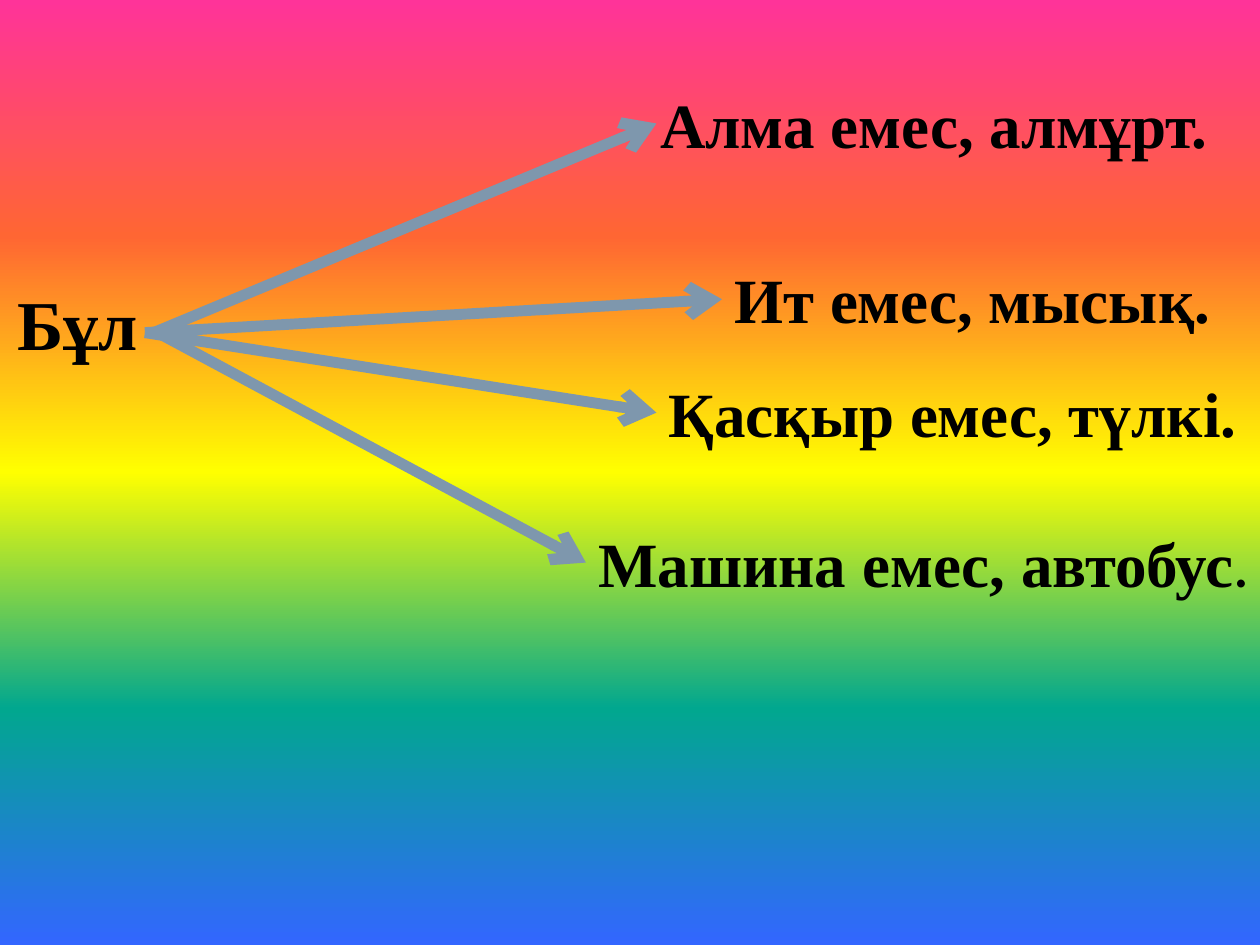
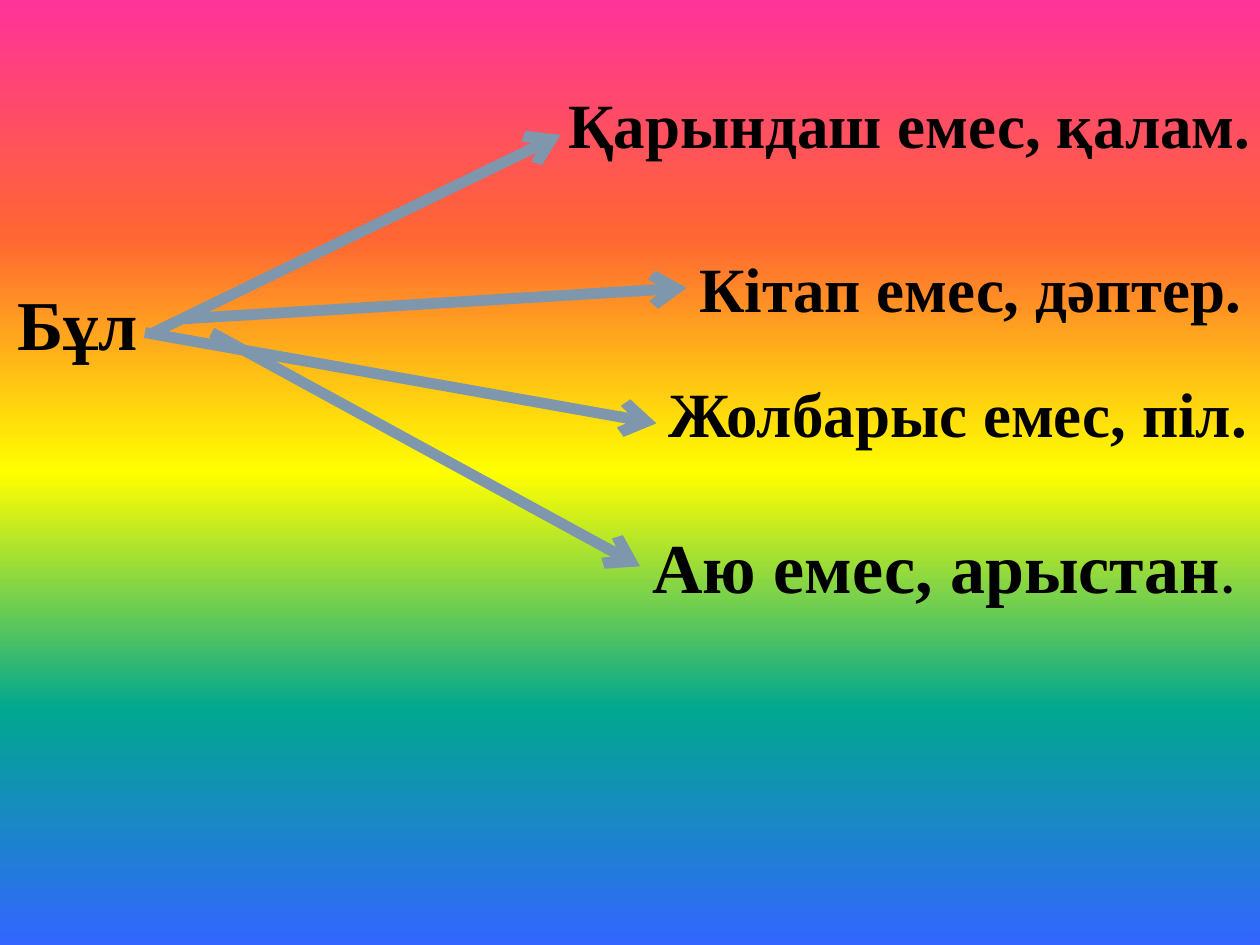
from lxml import etree
from pptx import Presentation
from pptx.dml.color import RGBColor
from pptx.enum.shapes import MSO_CONNECTOR
from pptx.enum.text import MSO_AUTO_SIZE
from pptx.oxml.ns import qn
from pptx.util import Inches, Pt

BLACK = RGBColor(0x00, 0x00, 0x00)
ARROW = RGBColor(0x7E, 0x97, 0xAD)
RAINBOW = [
    RGBColor(0xFF, 0x33, 0x99),
    RGBColor(0xFF, 0x66, 0x33),
    RGBColor(0xFF, 0xFF, 0x00),
    RGBColor(0x01, 0xA7, 0x8F),
    RGBColor(0x33, 0x66, 0xFF),
]
FONT = "Times New Roman"
DOT_FONT = "Lato"
BASE, LARGE = 36, 40
LEFT_SIDE = 1
START = (1.15, 2.64)

# Each answer: text, box, size, light final dot, arrow start, arrow end.
# An arrow end of None joins the arrow to the middle of the box's left side.
FIRST_ANSWERS = [
    ("Алма емес, алмұрт.", (5.14, 0.63, 4.59, 0.71), BASE, False, (1.22, 2.64), (5.21, 0.98)),
    ("Ит емес, мысық.", (5.73, 2.02, 4.02, 0.71), BASE, False, START, None),
    ("Қасқыр емес, түлкі.", (5.21, 2.92, 4.75, 0.71), BASE, False, START, None),
    ("Машина емес, автобус", (4.65, 4.11, 5.48, 0.71), BASE, True, (1.25, 2.64), None),
]
SECOND_ANSWERS = [
    ("Қарындаш емес, қалам.", (4.41, 0.63, 5.68, 0.71), BASE, False, (1.22, 2.64), (4.45, 1.07)),
    ("Кітап емес, дәптер.", (5.45, 1.93, 4.55, 0.71), BASE, False, (1.46, 2.53), None),
    ("Жолбарыс емес, піл.", (5.21, 2.92, 4.84, 0.71), BASE, False, START, (5.21, 3.36)),
    ("Аю емес, арыстан", (5.08, 4.11, 4.92, 0.77), LARGE, True, (1.68, 2.64), None),
]


def paint_rainbow(s):
    """Fill the slide background with evenly spaced colours, top to bottom."""
    fill = s.background.fill
    fill.gradient()
    fill.gradient_angle = 270
    stops = next(s.element.iter(qn("a:gsLst")))
    for stop in list(stops):
        stops.remove(stop)
    step = 100000 // (len(RAINBOW) - 1)
    for i, color in enumerate(RAINBOW):
        stop = etree.SubElement(stops, qn("a:gs"), pos=str(i * step))
        etree.SubElement(stop, qn("a:srgbClr"), val=str(color))


def add_label(s, text, box, size, light_dot=False):
    sp = s.shapes.add_textbox(*map(Inches, box))
    tf = sp.text_frame
    tf.word_wrap = False
    tf.auto_size = MSO_AUTO_SIZE.SHAPE_TO_FIT_TEXT
    p = tf.paragraphs[0]
    p.font.name = FONT
    p.font.size = Pt(size)
    p.font.bold = True
    p.font.color.rgb = BLACK
    p.add_run().text = text
    if light_dot:
        r = p.add_run()
        r.text = "."
        r.font.name = DOT_FONT
        r.font.size = Pt(BASE)
        r.font.bold = False
    return sp


def add_arrow(s, start, end, label):
    """Draw an arrow to the end point, or to the label's left side if end is None."""
    x, y = map(Inches, end or start)
    line = s.shapes.add_connector(MSO_CONNECTOR.STRAIGHT, *map(Inches, start), x, y)
    if end is None:
        line.end_connect(label, LEFT_SIDE)
    line.line.color.rgb = ARROW
    line.line.width = Pt(6.25)
    etree.SubElement(line.line._get_or_add_ln(), qn("a:tailEnd"), type="arrow")
    etree.SubElement(line.element.spPr, qn("a:effectLst"))


def add_answers_slide(prs, answers):
    s = prs.slides.add_slide(prs.slide_layouts[6])
    paint_rainbow(s)
    add_label(s, "Бұл", (0.04, 2.18, 1.17, 0.77), LARGE)
    labels = [add_label(s, *answer[:4]) for answer in answers]
    for label, (*_, start, end) in zip(labels, answers):
        add_arrow(s, start, end, label)


def main():
    prs = Presentation()
    prs.slide_width, prs.slide_height = Inches(10), Inches(7.5)
    for answers in (FIRST_ANSWERS, SECOND_ANSWERS):
        add_answers_slide(prs, answers)
    prs.save("out.pptx")


if __name__ == "__main__":
    main()
